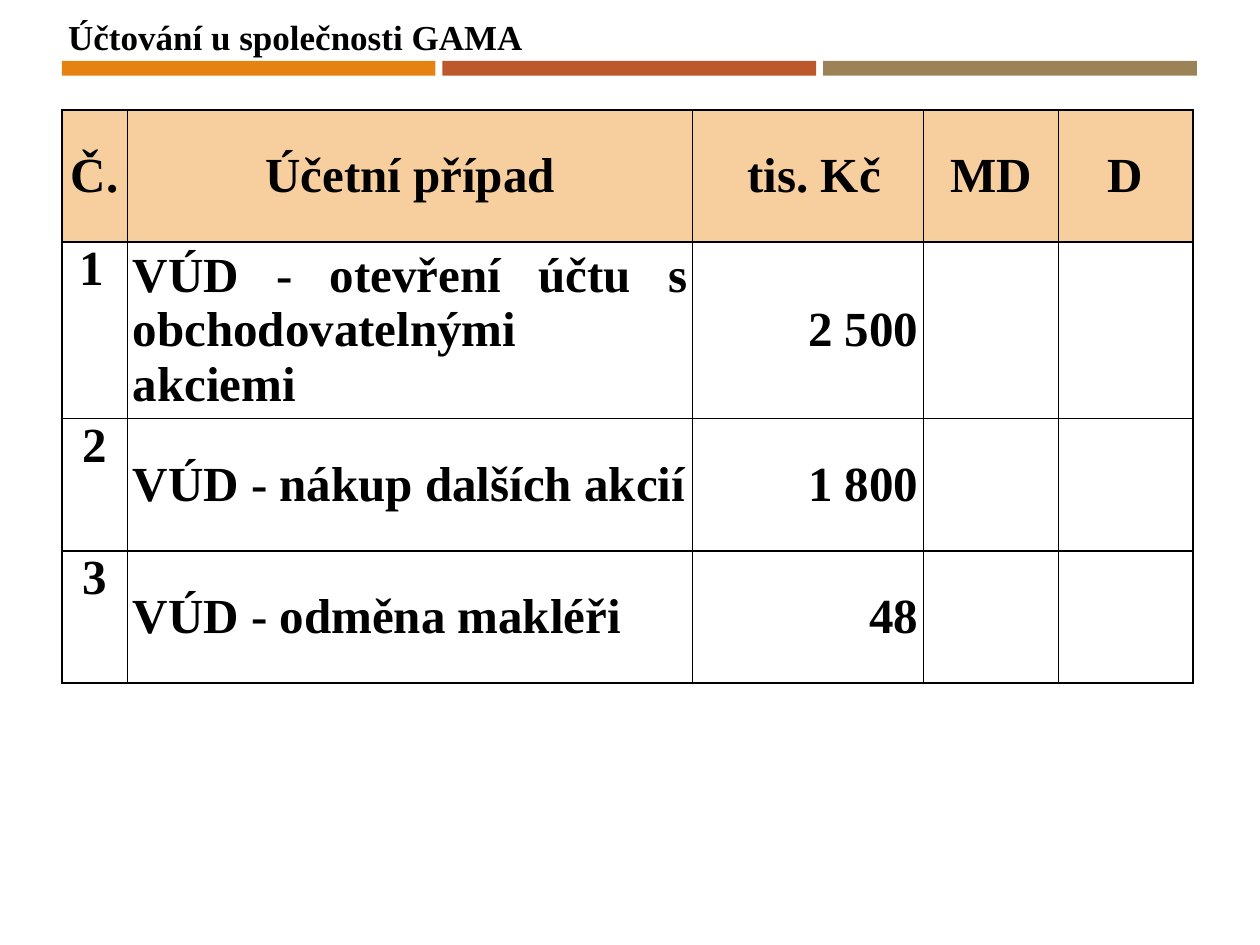
import pptx
import pptx.util
import pptx.dml.color
import pptx.enum.shapes
import pptx.enum.text
import pptx.oxml
import pptx.oxml.ns

Pt = pptx.util.Pt
Color = pptx.dml.color.RGBColor
Align = pptx.enum.text.PP_ALIGN
Anchor = pptx.enum.text.MSO_ANCHOR

BLACK = Color(0x00, 0x00, 0x00)
PEACH = Color(0xF7, 0xCE, 0x9D)
ORANGE = Color(0xE4, 0x83, 0x12)
RUST = Color(0xBD, 0x58, 0x2C)
KHAKI = Color(0x9B, 0x83, 0x57)
FONT = "Times New Roman"

TITLE = "Účtování u společnosti GAMA"
BARS = [ORANGE, RUST, KHAKI]
ROWS = [
    ["Č.", "Účetní případ", " tis. Kč", "MD", "D"],
    [" 1", "VÚD - otevření účtu s obchodovatelnými akciemi", "2 500", "", ""],
    ["2", "VÚD - nákup dalších akcií", "1 800", "", ""],
    ["3", "VÚD - odměna makléři", "48", "", ""],
]
WIDTHS = [37.7, 322.8, 132, 77, 77]
HEIGHTS = [75.6, 100.8, 75.6, 75.6]
ALIGNS = [Align.CENTER, Align.JUSTIFY, Align.RIGHT, Align.CENTER, Align.CENTER]
LEFT = 35.3


def write(frame, text, size=28, align=Align.LEFT):
    para = frame.paragraphs[0]
    para.alignment = align
    run = para.add_run()
    run.text = text
    font = run.font
    font.name, font.size, font.bold = FONT, Pt(size), True
    font.color.rgb = BLACK


def border(cell):
    props = cell._tc.get_or_add_tcPr()
    for index, side in enumerate(("lnL", "lnR", "lnT", "lnB")):
        line = pptx.oxml.parse_xml(
            f'<a:{side} {pptx.oxml.ns.nsdecls("a")} w="{Pt(1)}"><a:solidFill>'
            f'<a:srgbClr val="{BLACK}"/></a:solidFill></a:{side}>')
        props.insert(index, line)


def add_bars(slide, width=213.6, step=217.5):
    for index, color in enumerate(BARS):
        bar = slide.shapes.add_shape(
            pptx.enum.shapes.MSO_SHAPE.RECTANGLE,
            Pt(LEFT + index * step), Pt(34.8), Pt(width), Pt(8.5))
        bar.shadow.inherit = False
        bar.fill.solid()
        bar.fill.fore_color.rgb = color
        bar.line.fill.background()


def add_grid(slide):
    table = slide.shapes.add_table(
        len(ROWS), len(WIDTHS), Pt(LEFT), Pt(62.8),
        Pt(sum(WIDTHS)), Pt(sum(HEIGHTS))).table
    for column, width in zip(table.columns, WIDTHS):
        column.width = Pt(width)
    for r, row in enumerate(ROWS):
        table.rows[r].height = Pt(HEIGHTS[r])
        for c, text in enumerate(row):
            cell = table.cell(r, c)
            cell.margin_left = cell.margin_right = Pt(3)
            cell.margin_top = cell.margin_bottom = 0
            number = r > 0 and c == 0
            cell.vertical_anchor = Anchor.TOP if number else Anchor.MIDDLE
            if r == 0:
                cell.fill.solid()
                cell.fill.fore_color.rgb = PEACH
            else:
                cell.fill.background()
            border(cell)
            if text:
                align = Align.CENTER if r == 0 else ALIGNS[c]
                if (r, c) == (1, 0):
                    align = Align.LEFT
                write(cell.text_frame, text, align=align)


def add_title(slide):
    title = slide.shapes.title
    title.left, title.top = Pt(31.7), Pt(5)
    title.width, title.height = Pt(276.5), Pt(31.5)
    frame = title.text_frame
    frame.word_wrap = False
    frame.auto_size = pptx.enum.text.MSO_AUTO_SIZE.NONE
    frame.vertical_anchor = Anchor.TOP
    write(frame, TITLE, size=20)


def main():
    deck = pptx.Presentation()
    deck.slide_width, deck.slide_height = Pt(720), Pt(540)
    slide = deck.slides.add_slide(deck.slide_layouts[5])
    add_bars(slide)
    add_grid(slide)
    add_title(slide)
    deck.save("out.pptx")


if __name__ == "__main__":
    main()
